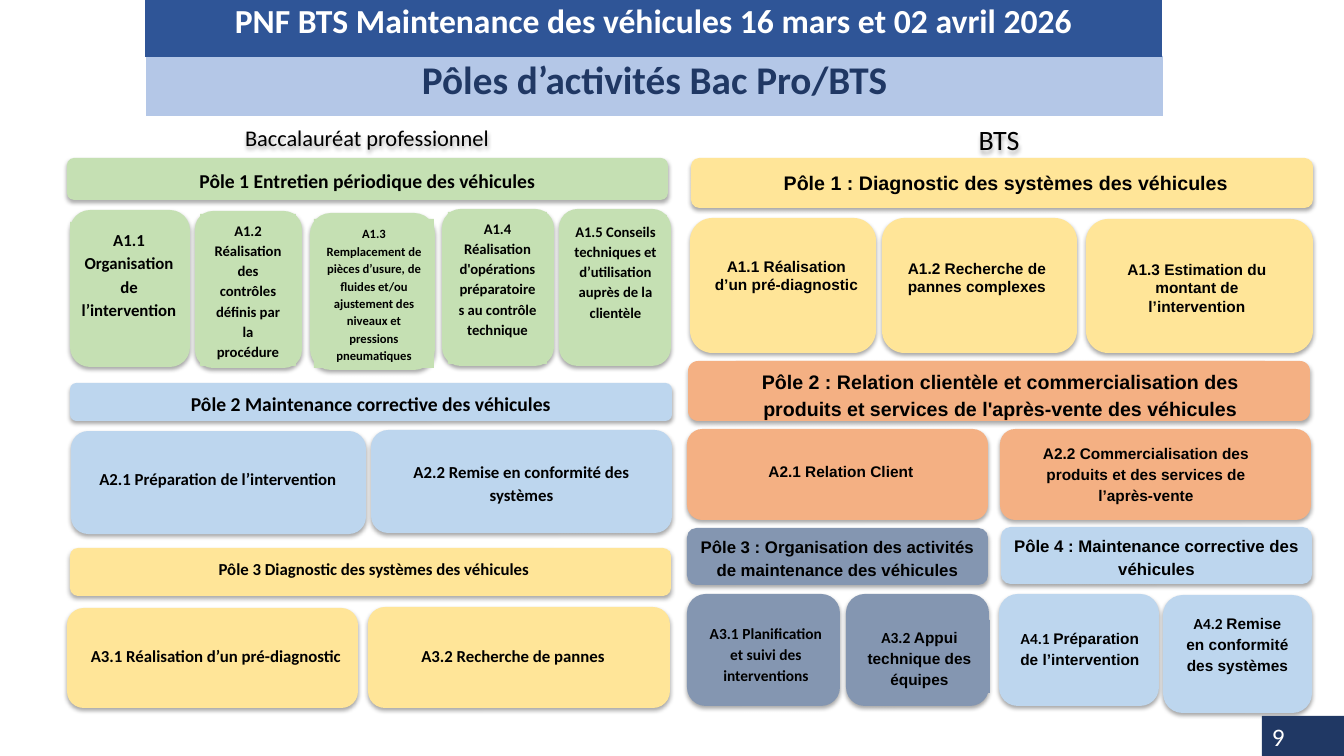
from lxml import etree
from pptx import Presentation
from pptx.dml.color import RGBColor
from pptx.enum.shapes import MSO_SHAPE
from pptx.enum.text import MSO_ANCHOR, PP_ALIGN
from pptx.oxml.ns import qn
from pptx.util import Emu, Pt

RECTANGLE = MSO_SHAPE.RECTANGLE
ROUNDED = MSO_SHAPE.FLOWCHART_ALTERNATE_PROCESS
TOP, MIDDLE = MSO_ANCHOR.TOP, MSO_ANCHOR.MIDDLE
LEFT, CENTER = PP_ALIGN.LEFT, PP_ALIGN.CENTER

PX = 914400 / 100.8
COLORS = {
    "navy": "203864", "blue": "2F5597", "pale": "B4C7E7", "white": "FFFFFF",
    "black": "000000", "yellow": "FFE598", "orange": "F4B083",
    "slate": "8496B1", "sky": "BDD6EE", "green": "C5E0B3",
}

CALIBRI = ("Calibri", "Calibri")
ARIAL = ("Arial", "Arial")
MIXED = ("Calibri", "Arial")

BANNERS = [
    ((146, 56, 1017, 60), "pale", "Pôles d’activités Bac Pro/BTS", 28, "navy"),
    ((145, 0, 1017, 57), "blue",
     "PNF BTS Maintenance des véhicules 16 mars et 02 avril 2026", 24, "white"),
]
COLUMN_TITLES = [
    ((67, 119, 600, 37), "Baccalauréat professionnel", 16),
    ((719, 118, 560, 44), "BTS", 20),
]
PAGE_NUMBER = ((1262, 716, 82, 40), "9", 18)

# Each entry: box, label area (None puts the text in the box), text, fonts, size, line spacing
POLES = [
    ("yellow", [
        ((691, 158, 622, 50), (700, 162, 612, 35),
         "Pôle 1 : Diagnostic des systèmes des véhicules", ARIAL, 14, 1.15),
        ((690, 218, 186, 135), (699, 252, 175, 67),
         "A1.1 Réalisation d’un pré-diagnostic", ARIAL, 11, 1),
        ((882, 218, 195, 135), (886, 254, 182, 67),
         "A1.2 Recherche de pannes complexes", ARIAL, 11, 1),
        ((1086, 219, 227, 134), (1097, 255, 200, 67),
         "A1.3 Estimation du montant de l’intervention", ARIAL, 11, 1),
    ]),
    ("orange", [
        ((688, 361, 622, 60), (736, 361, 529, 60),
         "Pôle 2 : Relation clientèle et commercialisation des produits "
         "et services de l'après-vente des véhicules", ARIAL, 14, 1.15),
        ((687, 429, 301, 91), (694, 454, 294, 30),
         "A2.1 Relation Client", ARIAL, 11, 1.15),
        ((1000, 429, 311, 91), (1008, 436, 276, 73),
         "A2.2 Commercialisation des produits et des services de l’après-vente",
         ARIAL, 11, 1.15),
    ]),
    ("slate", [
        ((687, 528, 301, 57), None,
         "Pôle 3 : Organisation des activités de maintenance des véhicules",
         ARIAL, 12, 1.15),
        ((687, 594, 153, 112), (696, 616, 140, 74),
         "A3.1 Planification et suivi des interventions", CALIBRI, 11, 1.15),
        ((846, 594, 143, 112), (849, 620, 141, 73),
         "A3.2 Appui technique des équipes", MIXED, 11, 1.15),
    ]),
    ("sky", [
        ((1001, 527, 311, 57), None,
         "Pôle 4 : Maintenance corrective des véhicules", ARIAL, 12, 1.15),
        ((999, 594, 160, 112), (1008, 621, 144, 51),
         "A4.1 Préparation de l’intervention", MIXED, 11, 1.15),
        ((1163, 595, 149, 118), (1173, 606, 129, 73),
         "A4.2 Remise en conformité des systèmes", MIXED, 11, 1.15),
    ]),
    ("green", [
        ((67, 158, 601, 42), None,
         "Pôle 1 Entretien périodique des véhicules", CALIBRI, 14, 1.15),
        ((70, 210, 120, 157), (70, 222, 118, 103),
         "A1.1 Organisation de l’intervention", CALIBRI, 12, 1.15),
        ((195, 211, 107, 157), (200, 214, 96, 152),
         "A1.2 Réalisation des contrôles définis par la procédure",
         CALIBRI, 10.5, 1.15),
        ((310, 213, 125, 157), (314, 219, 120, 149),
         "A1.3 Remplacement de pièces d’usure, de fluides et/ou ajustement "
         "des niveaux et pressions pneumatiques", CALIBRI, 9, 1.15),
        ((442, 209, 112, 157), (448, 212, 99, 152),
         "A1.4 Réalisation d'opérations préparatoires au contrôle technique",
         CALIBRI, 10.5, 1.15),
        ((559, 209, 112, 157), (564, 215, 103, 132),
         "A1.5 Conseils techniques et d’utilisation auprès de la clientèle",
         CALIBRI, 10.5, 1.15),
    ]),
    ("sky", [
        ((70, 383, 602, 38), None,
         "Pôle 2 Maintenance corrective des véhicules", CALIBRI, 14, 1.15),
        ((71, 431, 295, 103), (88, 461, 260, 32),
         "A2.1 Préparation de l’intervention", CALIBRI, 12, 1.15),
        ((371, 430, 301, 103), (389, 454, 265, 55),
         "A2.2 Remise en conformité des systèmes", CALIBRI, 12, 1.15),
    ]),
    ("yellow", [
        ((70, 548, 601, 48), (78, 551, 592, 32),
         "Pôle 3 Diagnostic des systèmes des véhicules", CALIBRI, 12, 1.15),
        ((67, 608, 291, 100), (79, 641, 274, 30),
         "A3.1 Réalisation d’un pré-diagnostic", CALIBRI, 12, 1),
        ((368, 607, 302, 101), (371, 641, 284, 30),
         "A3.2 Recherche de pannes", CALIBRI, 12, 1),
    ]),
]


def place(box):
    return [Emu(round(length * PX)) for length in box]


def rgb(color):
    return RGBColor.from_string(COLORS[color])


def add_shadow(shape):
    effects = etree.SubElement(shape._element.spPr, qn("a:effectLst"))
    shadow = etree.SubElement(effects, qn("a:outerShdw"), blurRad="40000",
                              dist="23000", dir="5400000", rotWithShape="0")
    color = etree.SubElement(shadow, qn("a:srgbClr"), val=COLORS["black"])
    etree.SubElement(color, qn("a:alpha"), val="35000")


def add_box(slide, kind, box, fill):
    shape = slide.shapes.add_shape(kind, *place(box))
    shape.fill.solid()
    shape.fill.fore_color.rgb = rgb(fill)
    shape.line.fill.background()
    if kind == ROUNDED:
        add_shadow(shape)
    else:
        shape.shadow.inherit = False
    return shape


def write(shape, text, fonts, size, spacing=1, color="black", bold=True,
          anchor=TOP, align=CENTER):
    frame = shape.text_frame
    frame.word_wrap = True
    frame.vertical_anchor = anchor
    if anchor == MIDDLE:
        frame.margin_left = frame.margin_right = Emu(round(7 * PX))
    paragraph = frame.paragraphs[0]
    paragraph.alignment = align
    paragraph.line_spacing = spacing
    code, space, name = text.partition(" ")
    parts = [text] if fonts[0] == fonts[1] else [code + space, name]
    for part, font_name in zip(parts, fonts):
        run = paragraph.add_run()
        run.text = part
        run.font.name = font_name
        run.font.size = Pt(size)
        run.font.bold = bold
        run.font.color.rgb = rgb(color)


def main():
    presentation = Presentation()
    presentation.slide_width, presentation.slide_height = place((1344, 756))
    slide = presentation.slides.add_slide(presentation.slide_layouts[6])

    for box, fill, text, size, color in BANNERS:
        write(add_box(slide, RECTANGLE, box, fill), text, CALIBRI, size, 0.9, color)

    for fill, entries in POLES:
        for box, label, text, fonts, size, spacing in entries:
            shape = add_box(slide, ROUNDED, box, fill)
            if label:
                shape = add_box(slide, RECTANGLE, label, fill)
            write(shape, text, fonts, size, spacing,
                  anchor=TOP if label else MIDDLE)

    for box, text, size in COLUMN_TITLES:
        title = slide.shapes.add_textbox(*place(box))
        add_shadow(title)
        write(title, text, CALIBRI, size, bold=False)

    box, text, size = PAGE_NUMBER
    write(add_box(slide, RECTANGLE, box, "navy"), text, CALIBRI, size,
          color="white", bold=False, align=LEFT)

    presentation.save("out.pptx")


if __name__ == "__main__":
    main()
